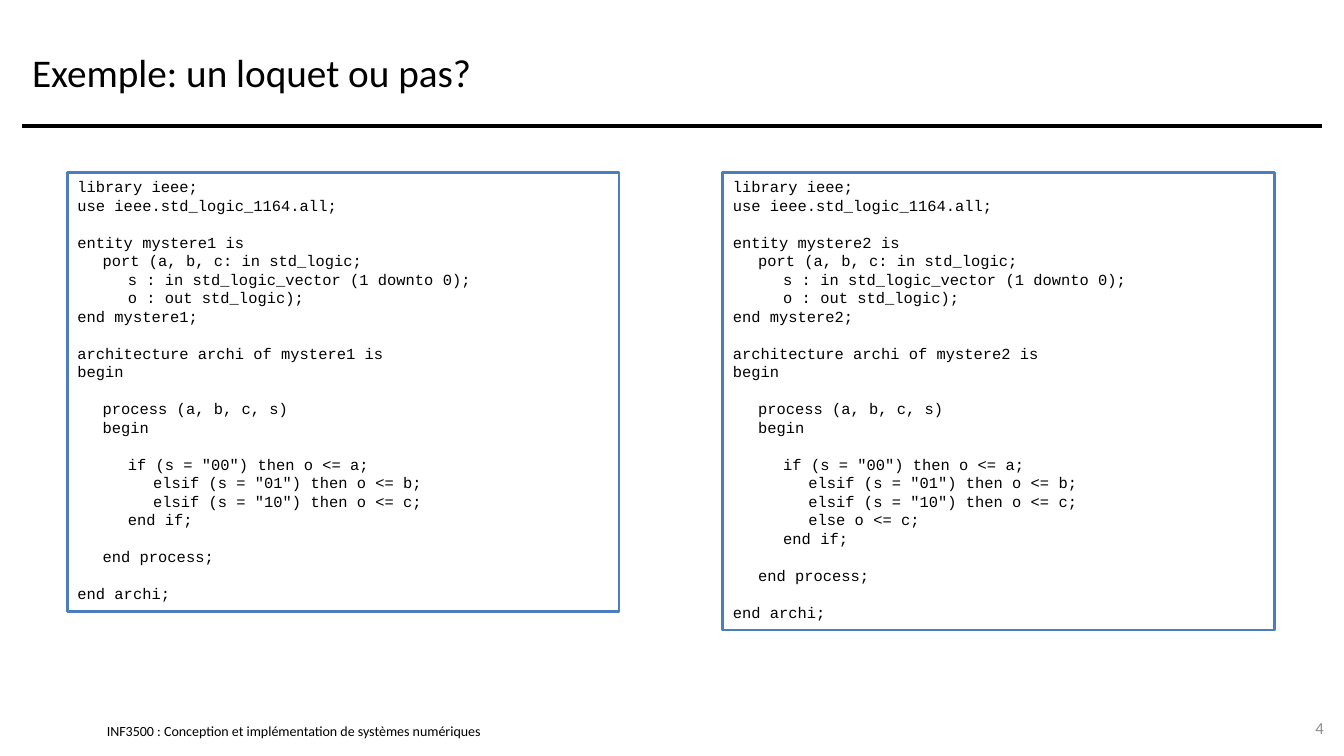
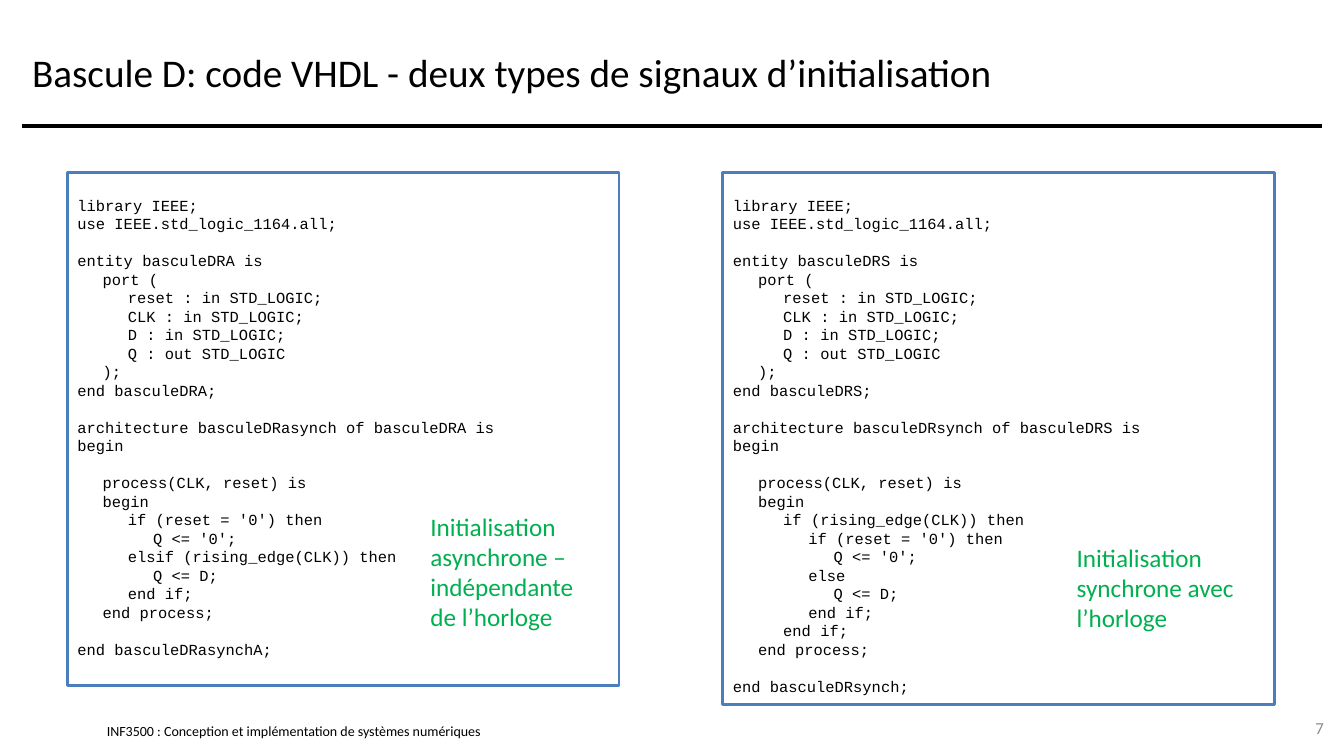
from lxml import etree
from pptx import Presentation
from pptx.dml.color import RGBColor
from pptx.enum.shapes import MSO_CONNECTOR, MSO_SHAPE
from pptx.enum.text import MSO_ANCHOR, PP_ALIGN
from pptx.oxml.ns import qn
from pptx.util import Inches, Pt

COLORS = {"text": "000000", "number": "8C8C8C", "frame": "4B7EBC", "note": "00B050"}
FOOTER = "INF3500 : Conception et implémentation de systèmes numériques"
CODE_LEFTS = (0.67, 7.17)
CODE_TOP, CODE_WIDTH = 1.71, 5.47
LINE_HEIGHT = 0.185  # inches per line of code
BLANK_LINE = 13.2    # points left for a blank line of code
INDENT = 4           # spaces per level in the listings below
TAB_STEP = 0.25

# Code of the first slide
MYSTERE1 = """\
library ieee;
use ieee.std_logic_1164.all;

entity mystere1 is
    port (a, b, c: in std_logic;
        s : in std_logic_vector (1 downto 0);
        o : out std_logic);
end mystere1;

architecture archi of mystere1 is
begin

    process (a, b, c, s)
    begin

        if (s = "00") then o <= a;
            elsif (s = "01") then o <= b;
            elsif (s = "10") then o <= c;
        end if;

    end process;

end archi;"""
MYSTERE2 = MYSTERE1.replace("mystere1", "mystere2").replace(
    "        end if;", "            else o <= c;\n        end if;")

# Code of the second slide: common start, then one body for each kind of reset
BASCULE = """
library IEEE;
use IEEE.std_logic_1164.all;

entity ENTITY is
    port (
        reset : in STD_LOGIC;
        CLK : in STD_LOGIC;
        D : in STD_LOGIC;
        Q : out STD_LOGIC
    );
end ENTITY;

architecture ARCHI of ENTITY is
begin

    process(CLK, reset) is
    begin
"""
ASYNCHRONE = BASCULE.replace("ENTITY", "basculeDRA").replace("ARCHI", "basculeDRasynch") + """\
        if (reset = '0') then
            Q <= '0';
        elsif (rising_edge(CLK)) then
            Q <= D;
        end if;
    end process;

end basculeDRasynchA;
"""
SYNCHRONE = BASCULE.replace("ENTITY", "basculeDRS").replace("ARCHI", "basculeDRsynch") + """\
        if (rising_edge(CLK)) then
            if (reset = '0') then
                Q <= '0';
            else
                Q <= D;
            end if;
        end if;
    end process;

end basculeDRsynch;"""

SLIDES = [
    {"title": "Exemple: un loquet ou pas?", "number": "4",
     "codes": (MYSTERE1, MYSTERE2), "notes": ()},
    {"title": "Bascule D: code VHDL - deux types de signaux d’initialisation", "number": "7",
     "codes": (ASYNCHRONE, SYNCHRONE),
     "notes": (("Initialisation asynchrone – indépendante de l’horloge", 4.17, 5.02, 1.31),
               ("Initialisation synchrone avec l’horloge", 10.58, 5.33, 1.01))},
]


def add_text(s, text, box, size, color="text", anchor=MSO_ANCHOR.MIDDLE,
             align=PP_ALIGN.LEFT, inset=True):
    sp = s.shapes.add_textbox(*(Inches(v) for v in box))
    tf = sp.text_frame
    tf.word_wrap = True
    tf.vertical_anchor = anchor
    if not inset:
        tf.margin_left = tf.margin_right = tf.margin_top = tf.margin_bottom = 0
    p = tf.paragraphs[0]
    p.alignment = align
    r = p.add_run()
    r.text = text
    r.font.name = "Calibri"
    r.font.size = Pt(size)
    r.font.color.rgb = RGBColor.from_string(COLORS[color])


def add_code(s, code, left):
    lines = code.split("\n")
    sp = s.shapes.add_shape(MSO_SHAPE.RECTANGLE, Inches(left), Inches(CODE_TOP),
                            Inches(CODE_WIDTH), Inches(0.1 + LINE_HEIGHT * len(lines)))
    sp.shadow.inherit = False
    sp.fill.background()
    sp.line.color.rgb = RGBColor.from_string(COLORS["frame"])
    sp.line.width = Pt(2)
    tf = sp.text_frame
    tf.word_wrap = True
    tf.vertical_anchor = MSO_ANCHOR.TOP
    if not lines[0]:
        tf.margin_top = Inches(0.05) + Pt(BLANK_LINE)
    p, blank = None, False
    for line in lines:
        if not line:
            blank = True
            continue
        first = p is None
        p = tf.paragraphs[0] if first else tf.add_paragraph()
        p.alignment = PP_ALIGN.LEFT
        tabs = etree.SubElement(p._p.get_or_add_pPr(), qn("a:tabLst"))
        for level in range(1, 6):
            etree.SubElement(tabs, qn("a:tab"), pos=str(Inches(TAB_STEP * level)), algn="l")
        if blank and not first:
            p.space_before = Pt(BLANK_LINE)
        blank = False
        bare = line.lstrip()
        r = p.add_run()
        r.text = "\t" * ((len(line) - len(bare)) // INDENT) + bare
        r.font.name = "Courier New"
        r.font.size = Pt(11)
        r.font.color.rgb = RGBColor.from_string(COLORS["text"])


prs = Presentation()
prs.slide_width, prs.slide_height = Inches(13.33), Inches(7.5)

for content in SLIDES:
    s = prs.slides.add_slide(prs.slide_layouts[6])

    # Footer, rule, title and page number
    add_text(s, FOOTER, (1.06, 7.17, 5.11, 0.17), 10, inset=False)
    rule = s.shapes.add_connector(MSO_CONNECTOR.STRAIGHT, Inches(0.22), Inches(1.25),
                                  Inches(13.11), Inches(1.25))
    rule.line.color.rgb = RGBColor.from_string(COLORS["text"])
    rule.line.width = Pt(3)
    etree.SubElement(rule._element.spPr, qn("a:effectLst"))
    add_text(s, content["title"], (0.22, 0.17, 12.89, 1.08), 28)
    add_text(s, content["number"], (12.56, 7.02, 0.67, 0.4), 12, color="number",
             align=PP_ALIGN.RIGHT)

    # Code side by side, with notes over it
    for code, left in zip(content["codes"], CODE_LEFTS):
        add_code(s, code, left)
    for note, left, top, height in content["notes"]:
        add_text(s, note, (left, top, 1.92, height), 18, color="note", anchor=MSO_ANCHOR.TOP)

prs.save("out.pptx")
